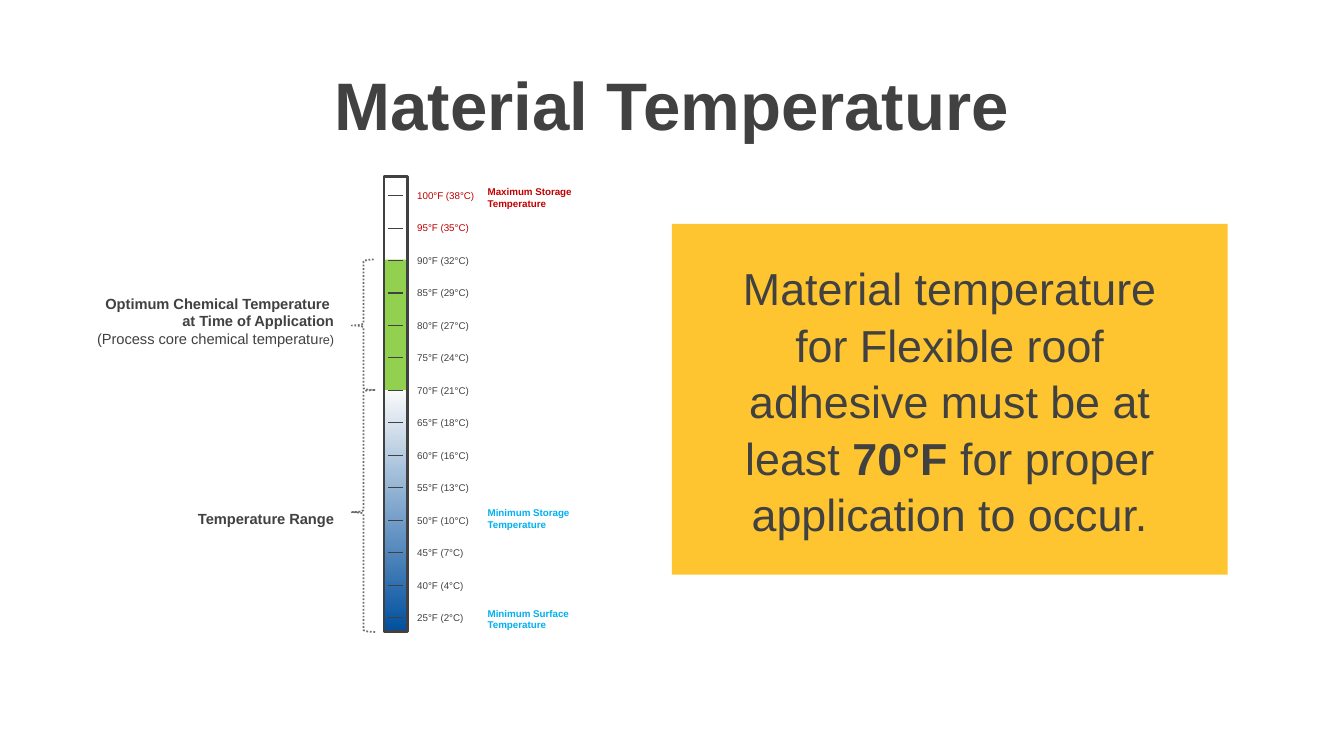
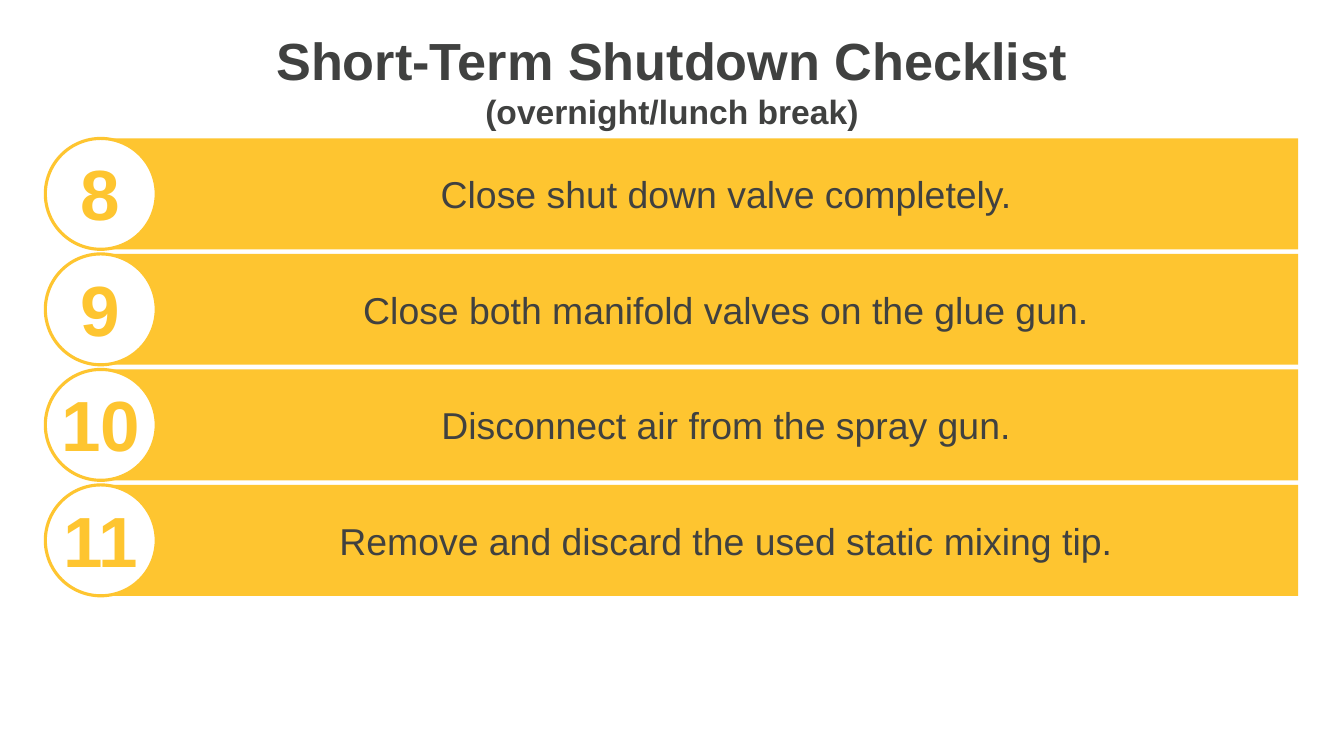
import lxml.etree
import pptx
import pptx.dml.color
import pptx.enum.dml
import pptx.enum.shapes
import pptx.enum.text
import pptx.oxml.ns
import pptx.util

Pt = pptx.util.Pt
Kind = pptx.enum.shapes.MSO_SHAPE
Align = pptx.enum.text.PP_ALIGN
Anchor = pptx.enum.text.MSO_ANCHOR

# Shared style
FONT = "Arial"
DARK, GOLD, WHITE = "404140", "FEC530", "FFFFFF"
RED, BLUE, GREEN, GREY = "C00000", "00B0F0", "92D050", "6A6D6A"


def tint(code):
    return pptx.dml.color.RGBColor.from_string(code)


def put(shape, *paras, fill=None, line=None, width=1, size=18, color=DARK,
        bold=False, align=Align.CENTER, anchor=Anchor.MIDDLE,
        inset=(7.2, 3.6, 7.2, 3.6), wrap=True, space=None):
    """Format a shape; a paragraph is a string or a list of (text, changes)."""
    shape.shadow.inherit = False
    if fill:
        shape.fill.solid()
        shape.fill.fore_color.rgb = tint(fill)
    else:
        shape.fill.background()
    if line:
        shape.line.color.rgb = tint(line)
        shape.line.width = Pt(width)
    else:
        shape.line.fill.background()
    frame = shape.text_frame
    frame.auto_size = pptx.enum.text.MSO_AUTO_SIZE.NONE
    frame.word_wrap = wrap
    frame.vertical_anchor = anchor
    (frame.margin_left, frame.margin_top,
     frame.margin_right, frame.margin_bottom) = map(Pt, inset)
    for i, para in enumerate(paras):
        p = frame.add_paragraph() if i else frame.paragraphs[0]
        p.alignment = align
        if space:
            p.line_spacing = space
        for words, change in [(para, {})] if isinstance(para, str) else para:
            run = p.add_run()
            run.text = words
            run.font.name = FONT
            run.font.size = Pt(change.get("size", size))
            run.font.bold = change.get("bold", bold)
            run.font.color.rgb = tint(color)
    return shape


deck = pptx.Presentation()
deck.slide_width, deck.slide_height = Pt(960), Pt(540)

# Title-only slides with a full-width centred title
heads = [
    (28.8, 48, ["Material Temperature"]),
    (12, 37.3, ["Short-Term Shutdown Checklist",
                [("(overnight/lunch break)", {"size": 24})]]),
]
pages = []
for top, size, lines in heads:
    page = deck.slides.add_slide(deck.slide_layouts[5])
    title = page.shapes.title
    title.left, title.top, title.width, title.height = map(Pt, (0, top, 960, 90))
    put(title, *lines, size=size, bold=True)
    pages.append(page.shapes)
gauge, list_ = pages

# Slide 1: key message
put(gauge.add_shape(Kind.RECTANGLE, Pt(480), Pt(160), Pt(397), Pt(250.5)),
    [("Material temperature for Flexible roof adhesive must be at least ", {}),
     ("70°F ", {"bold": True}), ("for proper application to occur.", {})],
    fill=GOLD, size=32, inset=(28.8, 0, 28.8, 0), space=1.05)

# Thermometer tube
LEFT, WIDE = 274.3, 16.6
TOP, WARM, COOL, END = 126, 185.4, 278.6, 451.4
cold = put(gauge.add_shape(Kind.RECTANGLE, Pt(LEFT), Pt(COOL), Pt(WIDE), Pt(END - COOL)))
cold.fill.gradient()
cold.fill.gradient_angle = 270
for stop, code in zip(cold.fill.gradient_stops, ("FAFAFA", "004F9E")):
    stop.color.rgb = tint(code)
put(gauge.add_shape(Kind.RECTANGLE, Pt(LEFT), Pt(WARM), Pt(WIDE), Pt(COOL - WARM)), fill=GREEN)
put(gauge.add_shape(Kind.RECTANGLE, Pt(LEFT), Pt(TOP), Pt(WIDE), Pt(END - TOP)),
    line=DARK, width=2)

# Scale: ticks and readings at equal steps
scale = [(100, 38), (95, 35), (90, 32), (85, 29), (80, 27), (75, 24), (70, 21),
         (65, 18), (60, 16), (55, 13), (50, 10), (45, 7), (40, 4), (25, 2)]
for i, (hot, deg) in enumerate(scale):
    y = 139.7 + 23.2 * i
    tick = gauge.add_connector(pptx.enum.shapes.MSO_CONNECTOR.STRAIGHT,
                               Pt(277.2), Pt(y), Pt(288), Pt(y))
    tick.line.color.rgb = tint(DARK)
    tick.line.width = Pt(0.75)
    lxml.etree.SubElement(tick.element.spPr, pptx.oxml.ns.qn("a:effectLst"))
    put(gauge.add_textbox(Pt(290.9), Pt(y - 8), Pt(60), Pt(16)),
        f"{hot}°F ({deg}°C)", size=7, color=RED if hot > 90 else DARK, align=Align.LEFT)

# Limits on the right
limits = [(129, "Maximum Storage Temperature", RED),
          (358, "Minimum Storage Temperature", BLUE),
          (430, "Minimum Surface Temperature", BLUE)]
for y, words, code in limits:
    put(gauge.add_textbox(Pt(341.3), Pt(y), Pt(91.4), Pt(24.5)), words,
        size=7, color=code, bold=True, align=Align.LEFT)

# Braces and range names on the left
ranges = [
    (WARM, COOL, 206.6, 45.4,
     ["Optimum Chemical Temperature ", "at Time of Application",
      [("(Process core chemical temperatu", {"bold": False}),
       ("re)", {"bold": False, "size": 9})]]),
    (COOL, END, 360.6, 20, ["Temperature Range"]),
]
for top, end, y, high, lines in ranges:
    brace = put(gauge.add_shape(Kind.LEFT_BRACE, Pt(251.3), Pt(top), Pt(WIDE), Pt(end - top)),
                line=GREY, width=1.25)
    brace.line.dash_style = pptx.enum.dml.MSO_LINE.ROUND_DOT
    brace.adjustments[0], brace.adjustments[1] = 0.083, 0.505
    put(gauge.add_textbox(Pt(35.6), Pt(y), Pt(210.2), Pt(high)), *lines,
        size=10.5, bold=True, align=Align.RIGHT)

# Slide 2: numbered steps
steps = ["Close shut down valve completely.",
         "Close both manifold valves on the glue gun.",
         "Disconnect air from the spray gun.",
         "Remove and discard the used static mixing tip."]
SIDE, STEP = 79.2, 82.5
for i, words in enumerate(steps):
    y = 98.9 + STEP * i
    put(list_.add_shape(Kind.RECTANGLE, Pt(67.7), Pt(y), Pt(859.5), Pt(SIDE)), words,
        fill=GOLD, size=26.7, inset=(67, 3.6, 23.8, 3.6))
    put(list_.add_shape(Kind.OVAL, Pt(32.4), Pt(y), Pt(SIDE), Pt(SIDE)), str(8 + i),
        fill=WHITE, line=GOLD, width=2.25, size=50.7, color=GOLD, bold=True,
        inset=(0, 0, 0, 2), wrap=False)

deck.save("out.pptx")
